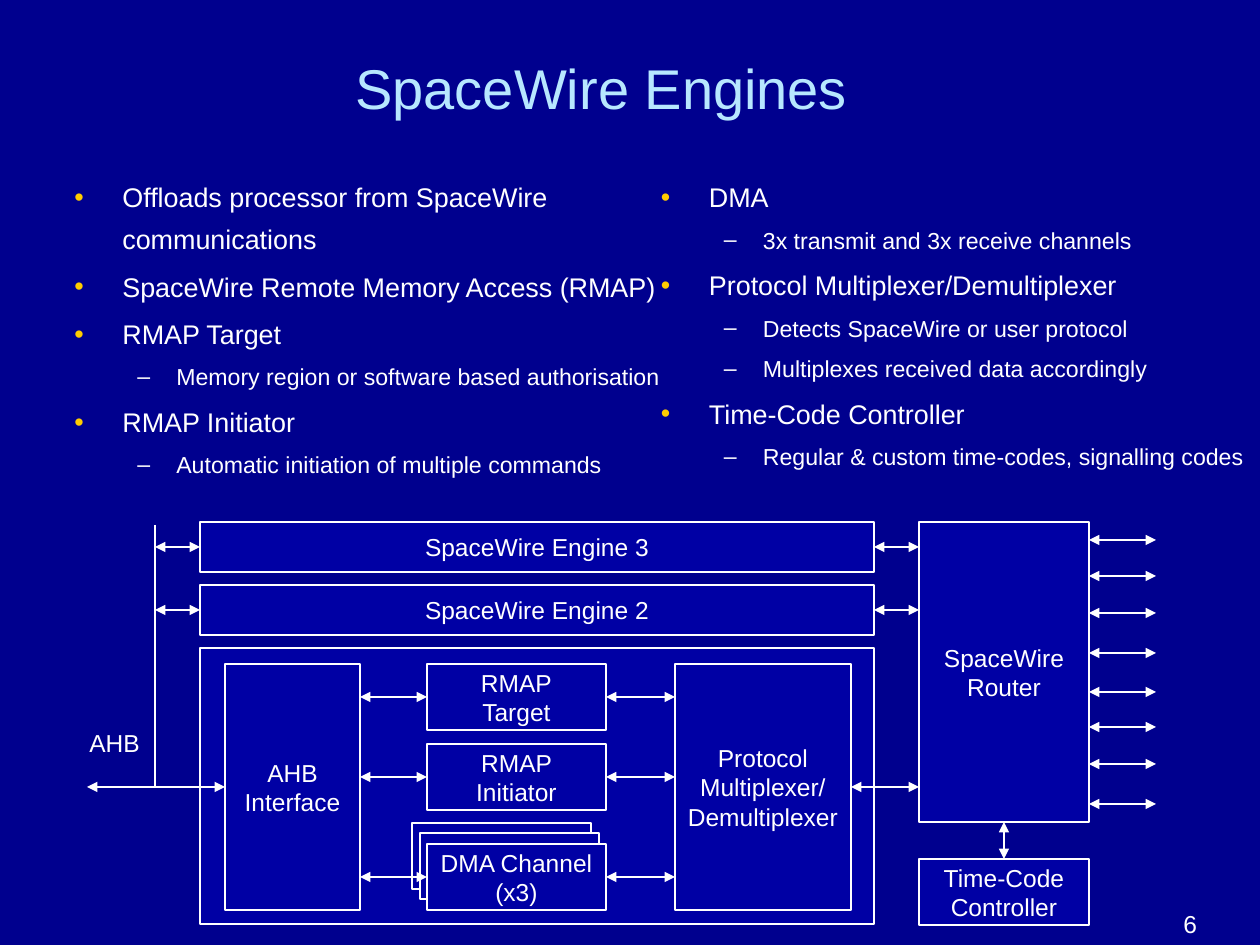
from dataclasses import dataclass

import lxml.etree
import pptx
import pptx.dml.color
import pptx.enum.shapes
import pptx.enum.text
import pptx.oxml.ns
import pptx.util

EMU_PER_PX = 914400 / 126
FONT = "Arial"
COLORS = {
    "background": "00008E",
    "box": "0000A4",
    "white": "FFFFFF",
    "title": "B7E7FF",
    "bullet": "FFCC00",
}
ANCHOR = pptx.enum.text.MSO_ANCHOR
ALIGN = pptx.enum.text.PP_ALIGN


@dataclass(frozen=True)
class Box:
    x: int
    y: int
    w: int
    h: int
    text: str = ""

    def side_middles(self):
        """Middles of the sides, in connection site order."""
        cx, cy = self.x + self.w // 2, self.y + self.h // 2
        return [(cx, self.y), (self.x, cy), (cx, self.y + self.h), (self.x + self.w, cy)]


@dataclass(frozen=True)
class Link:
    x1: int
    y1: int
    x2: int
    y2: int
    arrows: bool = True


@dataclass(frozen=True)
class Level:
    size: float
    margin: int
    hang: int
    bullet: str
    bullet_color: str


LEVELS = [
    Level(15.4, 48, 48, "•", "bullet"),
    Level(13.2, 102, 39, "–", "white"),
]

POINTS = [
    (0, "Offloads processor from SpaceWire communications"),
    (0, "SpaceWire Remote Memory Access (RMAP)"),
    (0, "RMAP Target"),
    (1, "Memory region or software based authorisation"),
    (0, "RMAP Initiator"),
    (1, "Automatic initiation of multiple commands"),
    (0, "DMA"),
    (1, "3x transmit and 3x receive channels"),
    (0, "Protocol Multiplexer/Demultiplexer"),
    (1, "Detects SpaceWire or user protocol"),
    (1, "Multiplexes received data accordingly"),
    (0, "Time-Code Controller"),
    (1, "Regular & custom time-codes, signalling codes"),
]

BOXES = [
    Box(200, 648, 674, 276),
    Box(412, 823, 179, 66),
    Box(420, 833, 179, 66),
    Box(200, 522, 674, 50, "SpaceWire Engine 3"),
    Box(200, 585, 674, 50, "SpaceWire Engine 2"),
    Box(225, 664, 135, 246, "AHB\nInterface"),
    Box(427, 664, 179, 66, "RMAP\nTarget"),
    Box(427, 744, 179, 66, "RMAP Initiator"),
    Box(427, 844, 179, 66, "DMA Channel (x3)"),
    Box(675, 664, 176, 246, "Protocol Multiplexer/ Demultiplexer"),
    Box(919, 522, 170, 300, "SpaceWire Router"),
    Box(919, 859, 170, 66, "Time-Code Controller"),
]

BUS_X = 155
ENGINE_YS = [547, 610]
UNIT_YS = [697, 777, 877]
PORT_YS = [540, 576, 613, 653, 692, 727, 764, 804]

LINKS = [
    Link(BUS_X, 525, BUS_X, 787, arrows=False),
    Link(225, 787, 87, 787),
    Link(919, 787, 851, 787),
    Link(1004, 822, 1004, 859),
    *(Link(x2, y, x1, y) for y in ENGINE_YS for x1, x2 in [(BUS_X, 200), (874, 919)]),
    *(Link(x2, y, x1, y) for y in UNIT_YS for x1, x2 in [(360, 427), (606, 675)]),
    *(Link(1156, y, 1089, y) for y in PORT_YS),
]


def px(n: int) -> int:
    return round(n * EMU_PER_PX)


def rgb(name: str) -> pptx.dml.color.RGBColor:
    return pptx.dml.color.RGBColor.from_string(COLORS[name])


def add_xml(parent, tag: str, **attrs: str):
    return lxml.etree.SubElement(parent, pptx.oxml.ns.qn(tag), attrs)


def set_font(p, size: float, color: str = "white") -> None:
    p.font.name = FONT
    p.font.size = pptx.util.Pt(size)
    p.font.color.rgb = rgb(color)


def add_text(s, box: Box, size: float = 14, color: str = "white",
             anchor=ANCHOR.TOP, wrap: bool = True):
    sp = s.shapes.add_textbox(px(box.x), px(box.y), px(box.w), px(box.h))
    tf = sp.text_frame
    tf.word_wrap = wrap
    tf.vertical_anchor = anchor
    tf.text = box.text
    set_font(tf.paragraphs[0], size, color)
    return tf


def add_points(s, box: Box) -> None:
    """Two-column bulleted list."""
    tf = add_text(s, box)
    body = tf.paragraphs[0]._p.getparent().find(pptx.oxml.ns.qn("a:bodyPr"))
    body.set("numCol", "2")
    for i, (depth, text) in enumerate(POINTS):
        level = LEVELS[depth]
        p = tf.add_paragraph() if i else tf.paragraphs[0]
        p.text = text
        p.level = depth
        p.line_spacing = 1.3
        p.space_before = pptx.util.Pt(round(level.size * 0.2, 1) if i else 0)
        pPr = p._p.get_or_add_pPr()
        pPr.set("marL", str(px(level.margin)))
        pPr.set("indent", str(-px(level.hang)))
        add_xml(add_xml(pPr, "a:buClr"), "a:srgbClr", val=COLORS[level.bullet_color])
        add_xml(pPr, "a:buFont", typeface=FONT)
        add_xml(pPr, "a:buChar", char=level.bullet)
        set_font(p, level.size)


def add_box(s, box: Box):
    sp = s.shapes.add_shape(pptx.enum.shapes.MSO_SHAPE.RECTANGLE,
                            px(box.x), px(box.y), px(box.w), px(box.h))
    sp.shadow.inherit = False
    sp.fill.solid()
    sp.fill.fore_color.rgb = rgb("box")
    sp.line.color.rgb = rgb("white")
    sp.line.width = pptx.util.Pt(0.75)
    if box.text:
        tf = sp.text_frame
        tf.text = box.text
        tf.vertical_anchor = ANCHOR.MIDDLE
        for p in tf.paragraphs:
            p.alignment = ALIGN.CENTER
            set_font(p, 14)
    return sp


def add_link(s, link: Link, sites: dict) -> None:
    """Draw a line, joined to any box whose side middle it meets."""
    start, end = (link.x1, link.y1), (link.x2, link.y2)
    line = s.shapes.add_connector(pptx.enum.shapes.MSO_CONNECTOR.STRAIGHT,
                                  *map(px, start + end))
    line.line.color.rgb = rgb("white")
    line.line.width = pptx.util.Pt(0.75)
    if link.arrows:
        ln = line.line._get_or_add_ln()
        for tag in ("a:headEnd", "a:tailEnd"):
            add_xml(ln, tag, type="triangle")
    add_xml(line._element.spPr, "a:effectLst")
    if start in sites:
        line.begin_connect(*sites[start])
    if end in sites:
        line.end_connect(*sites[end])


def main() -> None:
    prs = pptx.Presentation()
    prs.slide_width, prs.slide_height = px(1260), px(945)
    s = prs.slides.add_slide(prs.slide_layouts[6])
    s.background.fill.solid()
    s.background.fill.fore_color.rgb = rgb("background")

    add_text(s, Box(343, 37, 917, 101, "SpaceWire Engines"), 32, "title", ANCHOR.MIDDLE)
    add_points(s, Box(62, 165, 1198, 340))
    add_text(s, Box(1171, 886, 89, 59, "6"), anchor=ANCHOR.BOTTOM)

    sites = {}
    for box in BOXES:
        sp = add_box(s, box)
        sites.update({xy: (sp, i) for i, xy in enumerate(box.side_middles())})
    for link in LINKS:
        add_link(s, link, sites)
    add_text(s, Box(77, 722, 77, 43, "AHB"), wrap=False)

    prs.save("out.pptx")


if __name__ == "__main__":
    main()
